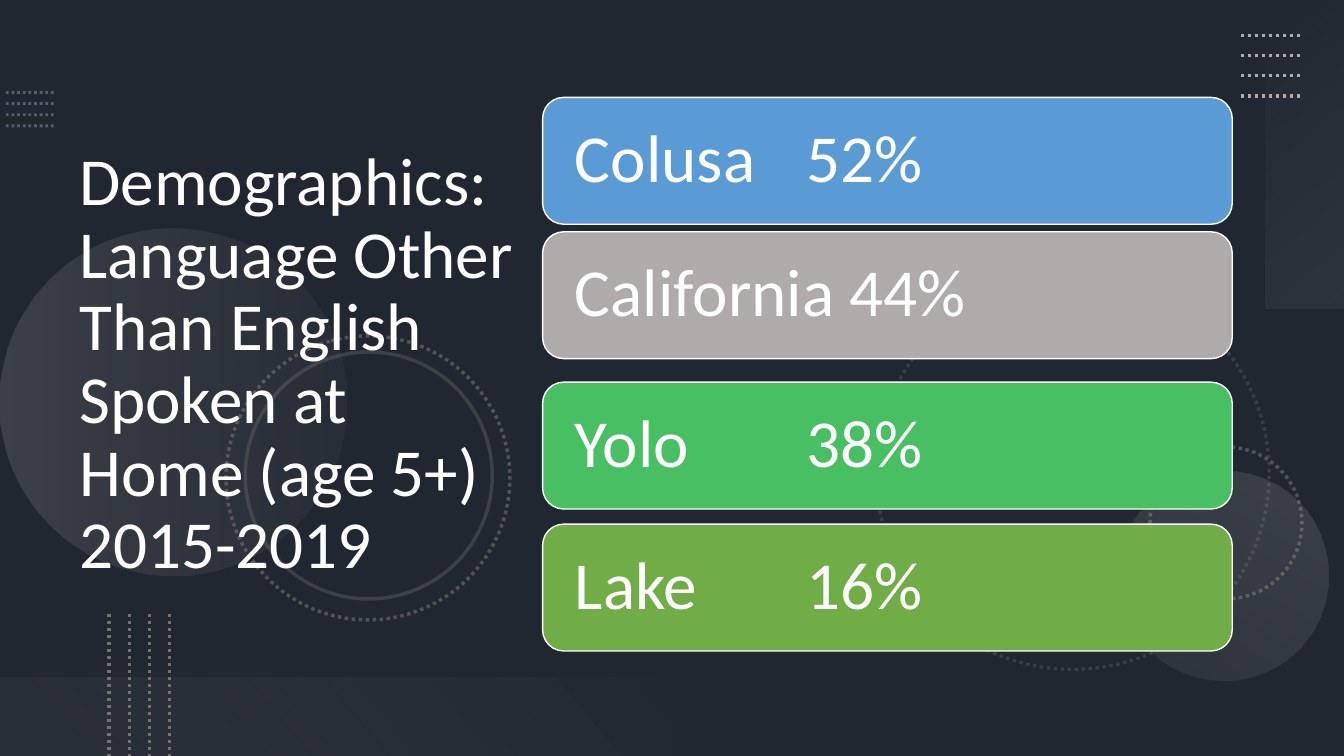
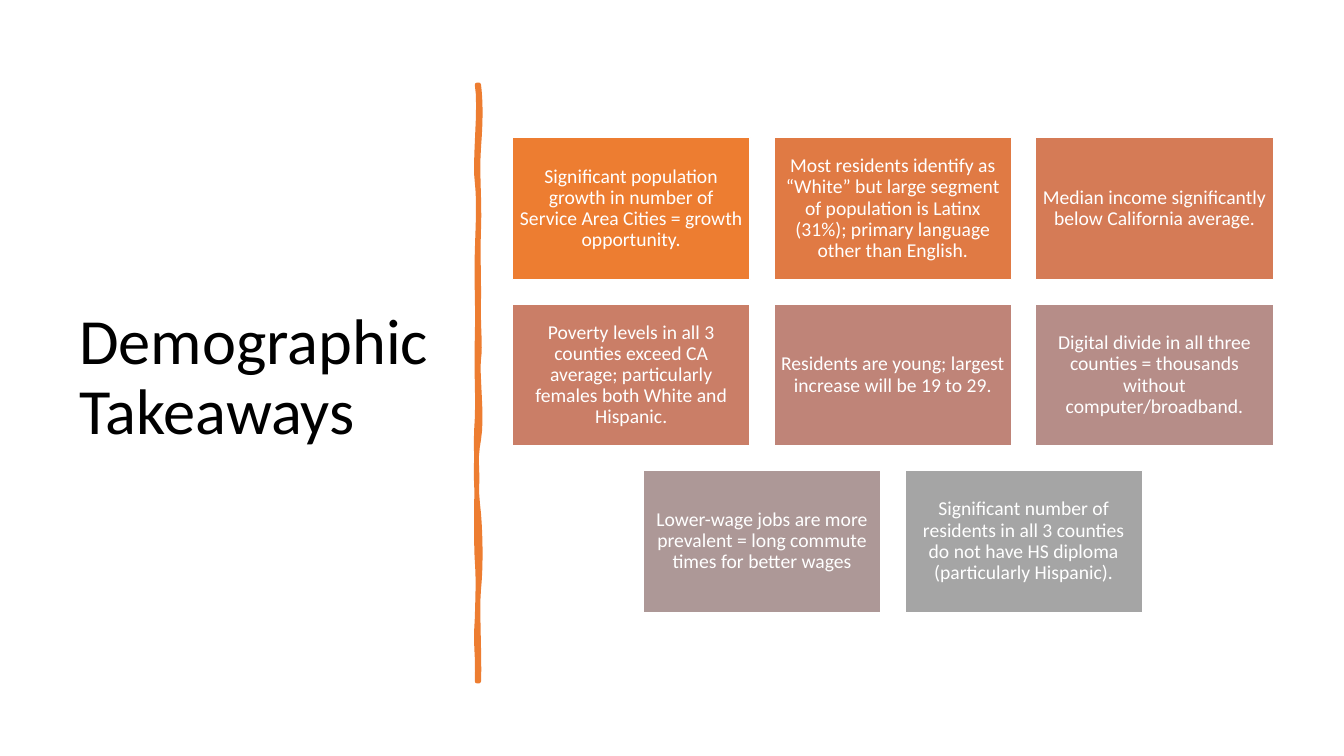
from lxml import etree
from pptx import Presentation, util as u
from pptx.dml.color import RGBColor
from pptx.enum import dml, shapes, text
from pptx.oxml.ns import qn

# Grid: 160 columns by 90 rows of square cells
COLUMNS, ROWS = 160, 90
CELL = u.Inches(1) // 12

COLOURS = {
    "white": "FFFFFF", "black": "000000", "slate": "44546A", "steel": "8497B0",
    "grey": "767171", "silver": "AFABAB", "mist": "F5F5F5", "pearl": "F1F0F0",
    "blue": "5B9BD5", "green": "49BF64", "olive": "70AD47",
    "orange": "ED7D31", "amber": "E07A44", "copper": "D57B56", "clay": "CA7E67",
    "rose": "BF8478", "mauve": "B68D88", "dusk": "AD9897", "ash": "A5A5A5",
}
FONT = "Calibri"
TITLE_FRAME = {"word_wrap": True, "auto_size": text.MSO_AUTO_SIZE.NONE,
               "vertical_anchor": text.MSO_ANCHOR.MIDDLE}
TAB_STOP = 27.6

# Slide 1: label, value, separator, colour, top row
LANGUAGE_BARS = [
    ("Colusa\t52%", "blue", 11.6),
    ("California 44%", "silver", 27.6),
    ("Yolo\t38%", "green", 45.5),
    ("Lake\t16%", "olive", 62.4),
]
# Left, top, diameter, rotation, opacity, dotted
RINGS = [
    (104.3, 32.9, 46.8, 75, 30, True),
    (136.9, 53.2, 18.1, 270, 60, True),
    (26.9, 40, 33.8, 75, 60, True),
    (29.2, 41.9, 29.4, 75, 35, False),
]

# Slide 2: rows of (text, colour)
TAKEAWAYS = [
    [("Significant population growth in number of Service Area Cities = growth "
      "opportunity.", "orange"),
     ("Most residents identify as “White” but large segment of population is "
      "Latinx (31%); primary language other than English.", "amber"),
     ("Median income significantly below California average.", "copper")],
    [("Poverty levels in all 3 counties exceed CA average; particularly females "
      "both White and Hispanic.", "clay"),
     ("Residents are young; largest increase will be 19 to 29.", "rose"),
     ("Digital divide in all three counties = thousands without "
      "computer/broadband.", "mauve")],
    [("Lower-wage jobs are more prevalent = long commute times for better wages",
      "dusk"),
     ("Significant number of residents in all 3 counties do not have HS diploma "
      "(particularly Hispanic).", "ash")],
]
# Divider edges: bend and row of both control points, then the end row
DIVIDER_TOP, DIVIDER_BOTTOM = 10.1, 81.1
RIGHT_EDGE = [
    (.24, 12.2, .24, 14.3, 17.5), (-.24, 20.8, .12, 23.4, 27.1),
    (-.12, 30.8, 0, 31.4, 35.3), (-.12, 39, .24, 41, 42.7),
    (-.24, 44.4, .48, 49.7, 52.3), (-.48, 54.8, -.36, 58.1, 61.2),
    (.24, 64.3, .24, 67.7, 70.1), (-.24, 72.4, .12, 78, DIVIDER_BOTTOM),
]
LEFT_EDGE = [
    (.12, 77.5, -.24, 77.3, 73.6), (.12, 70, .12, 68.4, 66.8),
    (-.12, 65.3, -.12, 59.4, 57.2), (0, 55.1, -.24, 53.4, 49.8),
    (.12, 46.3, -.12, 44.8, 40.2), (.12, 35.8, -.12, 33.7, 30),
    (.12, 26.2, .24, 24, 21.7), (-.36, 19.6, .48, 12.5, DIVIDER_TOP),
]


# Helpers
def cells(*counts):
    return [u.Emu(round(count * CELL)) for count in counts]


def colour(name):
    return RGBColor.from_string(COLOURS[name])


def apply(target, formats):
    for name, value in formats.items():
        setattr(target, name, value)


def set_opacity(shape, *percents):
    for element, percent in zip(shape.element.spPr.iter(qn("a:srgbClr")), percents):
        etree.SubElement(element, qn("a:alpha"), val=str(percent * 1000))


def set_line(line, name, width, dotted=False):
    line.color.rgb = colour(name)
    line.width = u.Pt(width)
    if dotted:
        line.dash_style = dml.MSO_LINE.ROUND_DOT


def write(frame, words, size, name, align=text.PP_ALIGN.LEFT):
    paragraph = frame.paragraphs[0]
    paragraph.text = words
    apply(paragraph, {"alignment": align, "line_spacing": 0.9})
    for run in paragraph.runs:
        apply(run.font, {"name": FONT, "size": u.Pt(size)})
        run.font.color.rgb = colour(name)
    return paragraph


# Kinds of element
def add_slide(presentation, background):
    slide = presentation.slides.add_slide(presentation.slide_layouts[5])
    slide.background.fill.solid()
    slide.background.fill.fore_color.rgb = colour(background)
    return slide


def set_title(slide, words, box, size, name):
    title = slide.shapes.title
    apply(title, dict(zip(("left", "top", "width", "height"), cells(*box))))
    apply(title.text_frame, TITLE_FRAME)
    write(title.text_frame, words, size, name)
    title.element.getparent().append(title.element)  # in front of the decoration


def add_plain_shape(slide, kind, box, fill=None, rotation=0):
    shape = slide.shapes.add_shape(kind, *cells(*box))
    shape.shadow.inherit = False
    shape.rotation = rotation
    shape.line.fill.background()
    if fill:
        shape.fill.solid()
        shape.fill.fore_color.rgb = colour(fill)
    else:
        shape.fill.background()
    return shape


def add_gradient(slide, kind, box, rotation, angle, stops):
    shape = add_plain_shape(slide, kind, box, rotation=rotation)
    shape.fill.gradient()
    shape.fill.gradient_angle = 360 - angle
    for stop, (position, name, _) in zip(shape.fill.gradient_stops, stops):
        stop.position = position
        stop.color.rgb = colour(name)
    set_opacity(shape, *(opacity for _, _, opacity in stops))


def add_ring(slide, left, top, diameter, rotation, opacity, dotted):
    ring = add_plain_shape(slide, shapes.MSO_SHAPE.OVAL,
                           (left, top, diameter, diameter), rotation=rotation)
    set_line(ring.line, "grey", 2.5, dotted)
    set_opacity(ring, opacity)


def add_dotted_lines(slide, start, end, step, name, width, opacity=100):
    """Draw four parallel lines, each moved on by step."""
    for index in range(4):
        dx, dy = (index * part for part in step)
        line = slide.shapes.add_connector(
            shapes.MSO_CONNECTOR.STRAIGHT,
            *cells(start[0] + dx, start[1] + dy, end[0] + dx, end[1] + dy))
        set_line(line.line, name, width, dotted=True)
        set_opacity(line, opacity)
        etree.SubElement(line.element.spPr, qn("a:effectLst"))


def add_card(slide, kind, box, words, fill, size, margin, align):
    card = add_plain_shape(slide, kind, box, fill)
    set_line(card.line, "white", 1)
    frame = card.text_frame
    apply(frame, TITLE_FRAME)
    apply(frame, dict.fromkeys(("margin_left", "margin_right", "margin_top",
                                "margin_bottom"), u.Inches(margin)))
    return write(frame, words, size, "white", align)


def add_tab_stop(paragraph, position):
    properties = paragraph._p.get_or_add_pPr()
    tabs = etree.SubElement(properties, qn("a:tabLst"))
    etree.SubElement(tabs, qn("a:tab"), pos=str(cells(position)[0]), algn="l")


def trace_edge(axis, row, curves, steps=8):
    """Turn an edge's Bézier curves into points."""
    points = []
    for bend1, row1, bend2, row2, end in curves:
        for step in range(1, steps + 1):
            t = step / steps
            s = 1 - t
            near, far = 3 * s * s * t, 3 * s * t * t
            points.append(cells(axis + near * bend1 + far * bend2,
                                s**3 * row + near * row1 + far * row2 + t**3 * end))
        row = end
    return points


def add_divider(slide, left, right):
    builder = slide.shapes.build_freeform(*cells(right, DIVIDER_TOP))
    builder.add_line_segments(
        trace_edge(right, DIVIDER_TOP, RIGHT_EDGE)
        + [cells(left, DIVIDER_BOTTOM)]
        + trace_edge(left, DIVIDER_BOTTOM, LEFT_EDGE), close=True)
    divider = builder.convert_to_shape()
    divider.shadow.inherit = False
    divider.fill.solid()
    divider.fill.fore_color.rgb = colour("orange")
    set_line(divider.line, "orange", 3.25)


# Slides
def decorate(slide):
    oval, rectangle = shapes.MSO_SHAPE.OVAL, shapes.MSO_SHAPE.RECTANGLE
    shade = add_plain_shape(slide, rectangle, (0, 0, COLUMNS, ROWS), "black")
    set_opacity(shade, 53)
    add_dotted_lines(slide, (0.7, 11), (6.4, 11), (0, 1.33), "steel", 2, 50)
    for ring in RINGS[:2]:
        add_ring(slide, *ring)
    add_gradient(slide, oval, (0, 27.25, 41.3, 41.3), 270, 90,
                 [(0, "silver", 20), (1, "grey", 10)])
    add_gradient(slide, oval, (133.2, 56, 25, 25), 210, 90,
                 [(0, "silver", 10), (1, "silver", 20)])
    for ring in RINGS[2:]:
        add_ring(slide, *ring)
    add_gradient(slide, rectangle, (137, 13.7, 36.7, 9.35), 270, 140,
                 [(0, "mist", 0), (1, "silver", 10)])
    add_dotted_lines(slide, (147.7, 4.2), (154.9, 4.2), (0, 2.4), "silver", 2.5)
    add_gradient(slide, rectangle, (0, 80.65, 80, 9.35), 180, 140,
                 [(0.1, "grey", 10), (1, "pearl", 0)])
    add_dotted_lines(slide, (13, 73.1), (13, ROWS), (2.4, 0), "grey", 2.5)


def build_language_slide(presentation):
    slide = add_slide(presentation, "slate")
    decorate(slide)
    set_title(slide, "Demographics:\vLanguage Other Than English Spoken at Home "
              "(age 5+) 2015-2019", (8.25, 6.5, 55.1, 74), 48, "white")
    for words, fill, top in LANGUAGE_BARS:
        paragraph = add_card(slide, shapes.MSO_SHAPE.ROUNDED_RECTANGLE,
                             (64.6, top, 82.1, 15.1), words, fill, 48, 0.26,
                             text.PP_ALIGN.LEFT)
        add_tab_stop(paragraph, TAB_STOP)


def build_takeaways_slide(presentation):
    slide = add_slide(presentation, "white")
    set_title(slide, "Demographic Takeaways", (8.25, 8.4, 44.9, 73.3), 46, "black")
    add_divider(slide, 56.8, 57)
    left, top, width, height, across, down = 61, 16.4, 28.3, 16.9, 31.15, 19.8
    for row, cards in enumerate(TAKEAWAYS):
        indent = (len(TAKEAWAYS[0]) - len(cards)) * across / 2
        for column, (words, fill) in enumerate(cards):
            box = (left + indent + column * across, top + row * down, width, height)
            add_card(slide, shapes.MSO_SHAPE.RECTANGLE, box, words, fill, 14, 0.06,
                     text.PP_ALIGN.CENTER)


def main():
    presentation = Presentation()
    width, height = cells(COLUMNS, ROWS)
    apply(presentation, {"slide_width": width, "slide_height": height})
    build_language_slide(presentation)
    build_takeaways_slide(presentation)
    presentation.save("out.pptx")


if __name__ == "__main__":
    main()
